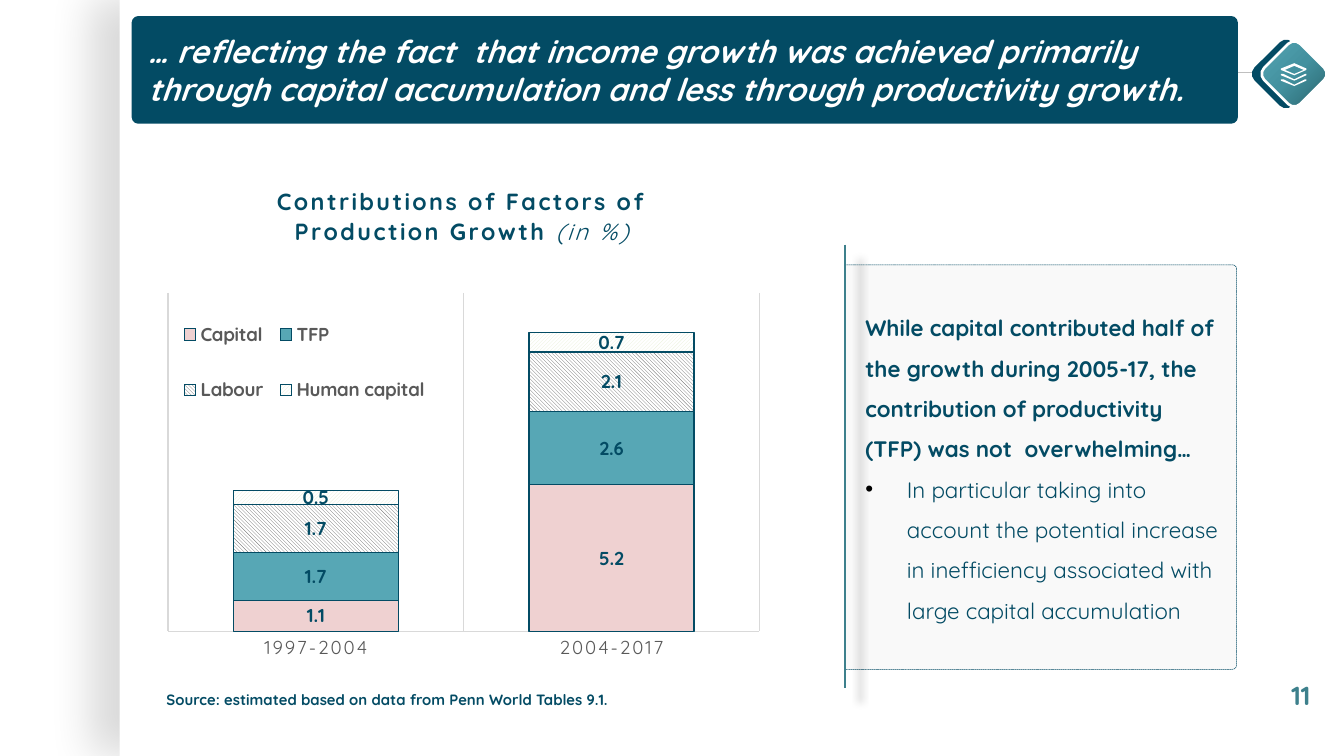
import pptx
import pptx.chart.data
import pptx.dml.color
import pptx.enum.chart
import pptx.enum.dml
import pptx.enum.shapes
import pptx.enum.text
import pptx.oxml
import pptx.oxml.ns
import pptx.util
from lxml import etree
from pptx.util import Inches

FONT = "Quicksand"
NAVY, TEAL, WHITE, GREY = "034B64", "3D808C", "FFFFFF", "595959"
SLIDE_WIDTH, SLIDE_HEIGHT = 10, 10 * 9 / 16
CHART_BOX = (1.08, 1.19, 4.73, 3.82)
SHAPES = pptx.enum.shapes.MSO_SHAPE
PATTERNS = pptx.enum.dml.MSO_PATTERN
qn = pptx.oxml.ns.qn


def color(value):
    return pptx.dml.color.RGBColor.from_string(value)


def set_fill(fill, value):
    fill.solid()
    fill.fore_color.rgb = color(value)


def set_line(line, value, width):
    set_fill(line.fill, value)
    line.width = pptx.util.Pt(width)


def set_font(font, size, value, bold=False, italic=False):
    font.name, font.size = FONT, pptx.util.Pt(size)
    font.bold, font.italic = bold, italic
    font.color.rgb = color(value)


def set_shadow(shape, opacity=0, blur=0, distance=0, angle=0):
    """Replace the theme shadow by a black one, or by none at zero opacity."""
    properties = shape._element.spPr
    effects = properties.find(qn("a:effectLst"))
    if effects is None:
        effects = etree.SubElement(properties, qn("a:effectLst"))
    if opacity:
        shadow = etree.SubElement(
            effects, qn("a:outerShdw"), blurRad=str(pptx.util.Pt(blur)),
            dist=str(pptx.util.Pt(distance)), dir=str(angle * 60000),
            algn="ctr", rotWithShape="0")
        black = etree.SubElement(shadow, qn("a:srgbClr"), val="000000")
        etree.SubElement(black, qn("a:alpha"), val=str(opacity * 1000))


def add_box(slide, kind, box, fill, line=None, adjustments=(), rotation=0):
    shape = slide.shapes.add_shape(kind, *map(Inches, box))
    shape.shadow.inherit = False
    shape.rotation = rotation
    for index, value in enumerate(adjustments):
        shape.adjustments[index] = value
    set_fill(shape.fill, fill)
    if line:
        set_line(shape.line, *line)
    else:
        shape.line.fill.background()
    return shape


def add_line(slide, start, end, value, width):
    line = slide.shapes.add_connector(
        pptx.enum.shapes.MSO_CONNECTOR.STRAIGHT, *map(Inches, start + end))
    set_line(line.line, value, width)
    return line


def write(paragraph, text, size, value, bold=True, italic=False):
    paragraph.text = text
    paragraph.alignment = pptx.enum.text.PP_ALIGN.LEFT
    set_font(paragraph.font, size, value, bold, italic)


def add_text(slide, box, text, size, value, wrap=False):
    frame = slide.shapes.add_textbox(*map(Inches, box)).text_frame
    frame.word_wrap = wrap
    write(frame.paragraphs[0], text, size, value)
    return frame


def add_bullet(paragraph, indent):
    properties = paragraph._p.get_or_add_pPr()
    properties.set("marL", str(Inches(indent)))
    properties.set("indent", str(-Inches(indent)))
    bullet_color = etree.SubElement(properties, qn("a:buClr"))
    etree.SubElement(bullet_color, qn("a:srgbClr"), val="000000")
    etree.SubElement(properties, qn("a:buFont"), typeface="Arial")
    etree.SubElement(properties, qn("a:buChar"), char="•")


def set_layout(element, index, inner=False, **inches):
    """Place a chart part by x, y, w and h, in inches within the chart."""
    for old in element.findall(qn("c:layout")):
        element.remove(old)
    layout = etree.Element(qn("c:layout"))
    manual = etree.SubElement(layout, qn("c:manualLayout"))
    if inner:
        etree.SubElement(manual, qn("c:layoutTarget"), val="inner")
    for axis in "xy":
        etree.SubElement(manual, qn(f"c:{axis}Mode"), val="edge")
    for name, length in inches.items():
        whole = CHART_BOX[2] if name in "xw" else CHART_BOX[3]
        etree.SubElement(manual, qn(f"c:{name}"), val=str(length / whole))
    element.insert(index, layout)


def style_series(series, fill):
    if isinstance(fill, str):
        set_fill(series.format.fill, fill)
    else:
        pattern, foreground = fill
        series.format.fill.patterned()
        series.format.fill.pattern = pattern
        series.format.fill.fore_color.rgb = color(foreground)
        series.format.fill.back_color.rgb = color(WHITE)
    set_line(series.format.line, NAVY, 0.75)
    labels = series.data_labels
    labels.show_value = True
    labels.number_format, labels.number_format_is_linked = "0.0", False
    labels.position = pptx.enum.chart.XL_LABEL_POSITION.CENTER
    set_font(labels.font, 10, NAVY, bold=True)


def add_growth_chart(slide):
    series_rows = [
        ("Capital", (1.1, 5.2), "EFD1D1"),
        ("TFP", (1.7, 2.6), "57A7B5"),
        ("Labour", (1.7, 2.1), (PATTERNS.LIGHT_DOWNWARD_DIAGONAL, "666666")),
        ("Human capital", (0.5, 0.7), (PATTERNS.LIGHT_UPWARD_DIAGONAL, "E8F0D8")),
    ]
    data = pptx.chart.data.CategoryChartData()
    data.categories = ["1997-2004", "2004-2017"]
    for name, values, _ in series_rows:
        data.add_series(name, values)
    chart = slide.shapes.add_chart(pptx.enum.chart.XL_CHART_TYPE.COLUMN_STACKED,
                                   *map(Inches, CHART_BOX), data).chart
    chart.font.size, chart.font.name = pptx.util.Pt(10), "Arial"
    plot = chart.plots[0]
    plot.gap_width, plot.overlap, plot.vary_by_categories = 79, 100, False
    for series, (_, _, fill) in zip(plot.series, series_rows):
        style_series(series, fill)

    chart.has_title = True
    paragraph = chart.chart_title.text_frame.paragraphs[0]
    for text, emphasis in (("Contributions of Factors of Production Growth ", False),
                           ("(in %)", True)):
        run = paragraph.add_run()
        run.text = text
        set_font(run.font, 12.5, NAVY, bold=not emphasis, italic=emphasis)
        run.font._rPr.set("spc", "120")
    set_layout(chart.chart_title._element, 1, x=0.95, y=0.15)

    axis = chart.category_axis
    axis.has_major_gridlines = True
    axis.major_tick_mark = pptx.enum.chart.XL_TICK_MARK.NONE
    for line in (axis.format.line, axis.major_gridlines.format.line):
        set_line(line, "D9D9D9", 0.75)
    set_font(axis.tick_labels.font, 10, GREY)
    axis.tick_labels.font._rPr.set("spc", "120")
    chart.value_axis.minimum_scale, chart.value_axis.maximum_scale = 0, 12
    chart.value_axis.has_major_gridlines = False
    chart.value_axis.visible = False

    chart.has_legend = True
    chart.legend.position = pptx.enum.chart.XL_LEGEND_POSITION.TOP
    chart.legend.include_in_layout = False
    set_font(chart.legend.font, 10, GREY, bold=True)
    set_layout(chart.legend._element, 1, x=0.21, y=0.97, w=1.95, h=1.07)
    plot_area = chart._chartSpace.chart.plotArea
    set_layout(plot_area, 0, inner=True, x=0.17, y=0.99, w=4.4, h=2.52)


def add_comment(slide):
    panel = add_box(slide, SHAPES.ROUND_2_SAME_RECTANGLE, (6.24, 2.02, 3.01, 2.91),
                    "F9F9F9", (NAVY, 0.25), (0.01, 0), 90)
    panel.line.dash_style = pptx.enum.dml.MSO_LINE.SQUARE_DOT
    set_shadow(add_line(slide, (6.29, 1.82), (6.29, 5.12), TEAL, 1), 40, 4, 11, 45)
    frame = add_text(slide, (6.34, 2.17, 2.83, 2.54),
                     "While capital contributed half of the growth during 2005-17, the "
                     "contribution of productivity (TFP) was not  overwhelming…",
                     12, NAVY, wrap=True)
    frame.vertical_anchor = pptx.enum.text.MSO_ANCHOR.MIDDLE
    detail = frame.add_paragraph()
    add_bullet(detail, 0.31)
    write(detail, "In particular taking into account the potential increase in "
          "inefficiency associated with large capital accumulation", 12, NAVY, bold=False)
    for paragraph in frame.paragraphs:
        paragraph.line_spacing = 1.5


def set_radial_gradient(shape, stops):
    marks = "".join(f'<a:gs pos="{position * 1000}"><a:srgbClr val="{value}"/></a:gs>'
                    for position, value in stops)
    gradient = pptx.oxml.parse_xml(
        f'<a:gradFill {pptx.oxml.ns.nsdecls("a")} rotWithShape="1"><a:gsLst>{marks}</a:gsLst>'
        '<a:path path="circle"><a:fillToRect l="100000" t="100000"/></a:path></a:gradFill>')
    properties = shape._element.spPr
    properties.replace(properties.find(qn("a:solidFill")), gradient)


def add_outline(slide, *contours):
    """Draw closed white contours, given in inches, as one shape."""
    first, *others = [[tuple(map(Inches, point)) for point in contour]
                      for contour in contours]
    builder = slide.shapes.build_freeform(*first[0])
    builder.add_line_segments(first[1:])
    for contour in others:
        builder.move_to(*contour[0])
        builder.add_line_segments(contour[1:])
    shape = builder.convert_to_shape()
    shape.shadow.inherit = False
    set_fill(shape.fill, WHITE)
    shape.line.fill.background()


def add_layers_badge(slide):
    add_box(slide, SHAPES.ROUNDED_RECTANGLE, (9.37, 0.35, 0.4, 0.4), NAVY, rotation=315)
    front = add_box(slide, SHAPES.ROUNDED_RECTANGLE, (9.44, 0.36, 0.38, 0.38), TEAL,
                    (WHITE, 1.42), rotation=315)
    set_radial_gradient(front, [(0, "2F666F"), (26, "377B86"), (50, "43919F"),
                                (100, "57A7B5")])
    add_outline(slide,
                [(9.63, 0.49), (9.56, 0.52), (9.63, 0.55), (9.7, 0.52)],
                [(9.63, 0.47), (9.72, 0.51), (9.72, 0.52), (9.63, 0.56),
                 (9.53, 0.52), (9.53, 0.51)])
    for top in (0.59, 0.55):
        add_outline(slide, [(9.53, top), (9.55, top), (9.63, top + 0.04), (9.71, top),
                            (9.72, top), (9.72, top + 0.01), (9.63, top + 0.05),
                            (9.53, top + 0.01)])


def main():
    presentation = pptx.Presentation()
    presentation.slide_width = Inches(SLIDE_WIDTH)
    presentation.slide_height = Inches(SLIDE_HEIGHT)
    slide = presentation.slides.add_slide(presentation.slide_layouts[6])
    page = add_box(slide, SHAPES.RECTANGLE, (0.89, 0, 9.11, SLIDE_HEIGHT), WHITE)
    set_shadow(page, 15, 22.5, 15, 180)
    set_shadow(add_line(slide, (8.81, 0.54), (9.61, 0.54), "BFBFBF", 0.75))
    banner = add_box(slide, SHAPES.ROUNDED_RECTANGLE, (0.99, 0.13, 8.21, 0.78), NAVY,
                     (NAVY, 1.5), (0.05,))
    banner.text_frame.word_wrap = True
    banner.text_frame.vertical_anchor = pptx.enum.text.MSO_ANCHOR.MIDDLE
    write(banner.text_frame.paragraphs[0],
          "… reflecting the fact  that income growth was achieved primarily through "
          "capital accumulation and less through productivity growth.",
          17, WHITE, italic=True)
    add_comment(slide)
    add_text(slide, (9.51, 5.01, 0.42, 0.34), "11", 14, TEAL)
    add_growth_chart(slide)
    add_text(slide, (1.14, 5.09, 3.57, 0.24),
             "Source: estimated based on data from Penn World Tables 9.1.", 8, NAVY)
    add_layers_badge(slide)
    presentation.save("out.pptx")


if __name__ == "__main__":
    main()
